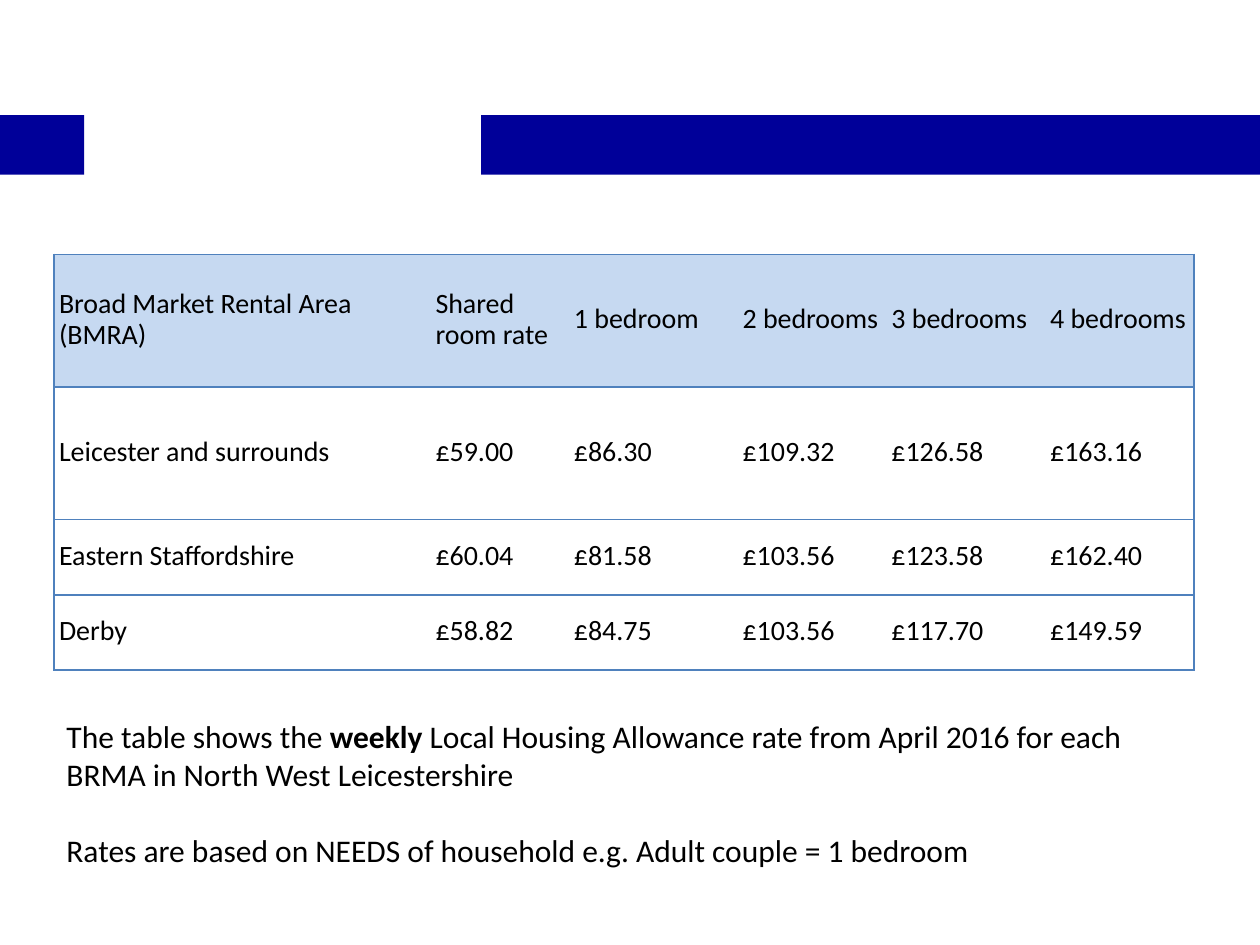
import pptx
import pptx.dml.color
import pptx.enum.shapes
import pptx.enum.text
import pptx.oxml
import pptx.oxml.ns
import pptx.util
from pptx.util import Cm

NAVY, PALE, BORDER, WHITE, BLACK = "000099", "C6D9F1", "4F81BD", "FFFFFF", "000000"

RATES = [
    ["Broad Market Rental Area (BMRA)", "Shared room rate", "1 bedroom",
     "2 bedrooms", "3 bedrooms", "4 bedrooms"],
    ["Leicester and surrounds", "£59.00", "£86.30", "£109.32", "£126.58", "£163.16"],
    ["Eastern Staffordshire", "£60.04", "£81.58", "£103.56", "£123.58", "£162.40"],
    ["Derby", "£58.82", "£84.75", "£103.56", "£117.70", "£149.59"],
]
COL_WIDTHS = [7.59, 2.79, 3.4, 3, 3.2, 3]
ROW_HEIGHTS = [2.67, 2.67, 1.52, 1.52]

NOTES = [
    [("The table shows the ", False), ("weekly", True),
     (" Local Housing Allowance rate from April 2016 for each BRMA"
      " in North West Leicestershire", False)],
    [("Rates are based on NEEDS of household e.g. Adult couple = 1 bedroom", False)],
]


def rgb(value):
    return pptx.dml.color.RGBColor.from_string(value)


def apply(target, values):
    for name, value in values.items():
        setattr(target, name, value)


class Deck:
    font = "Calibri"

    def __init__(self, width, height):
        self.prs = pptx.Presentation()
        apply(self.prs, {"slide_width": Cm(width), "slide_height": Cm(height)})
        self.s = self.prs.slides.add_slide(self.prs.slide_layouts[6])

    def run(self, p, text, size, bold=False):
        r = p.add_run()
        r.text = text
        apply(r.font, {"name": self.font, "size": pptx.util.Pt(size), "bold": bold})
        r.font.color.rgb = rgb(BLACK)

    def bar(self, left, top, width, height):
        sp = self.s.shapes.add_shape(
            pptx.enum.shapes.MSO_SHAPE.RECTANGLE,
            Cm(left), Cm(top), Cm(width), Cm(height))
        sp.shadow.inherit = False
        sp.fill.solid()
        sp.fill.fore_color.rgb = rgb(NAVY)
        sp.line.fill.background()

    def borders(self, cell, sides):
        tc_pr = cell._tc.get_or_add_tcPr()
        for i, side in enumerate("LRTB"):
            fill = (f'<a:solidFill><a:srgbClr val="{BORDER}"/></a:solidFill>'
                    if side in sides else "<a:noFill/>")
            tc_pr.insert(i, pptx.oxml.parse_xml(
                f'<a:ln{side} {pptx.oxml.ns.nsdecls("a")} w="12700">{fill}</a:ln{side}>'))

    def table(self, left, top, rows, widths, heights):
        tbl = self.s.shapes.add_table(
            len(rows), len(widths), Cm(left), Cm(top),
            Cm(sum(widths)), Cm(sum(heights))).table
        apply(tbl, {"first_row": False, "horz_banding": False})
        for col, width in zip(tbl.columns, widths):
            col.width = Cm(width)
        for row, height in zip(tbl.rows, heights):
            row.height = Cm(height)
        margins = {f"margin_{m}": Cm(0.1) for m in ("left", "right", "top", "bottom")}
        for i, texts in enumerate(rows):
            for j, text in enumerate(texts):
                cell = tbl.cell(i, j)
                apply(cell, {"vertical_anchor": pptx.enum.text.MSO_ANCHOR.MIDDLE, **margins})
                cell.fill.solid()
                cell.fill.fore_color.rgb = rgb(WHITE if i else PALE)
                left_side = "L" if j == 0 else ""
                right_side = "R" if j == len(texts) - 1 else ""
                self.borders(cell, "TB" + left_side + right_side)
                p = cell.text_frame.paragraphs[0]
                p.line_spacing = pptx.util.Pt(18)
                self.run(p, text, 16)

    def text(self, left, top, width, height, paragraphs, size, gap):
        tf = self.s.shapes.add_textbox(Cm(left), Cm(top), Cm(width), Cm(height)).text_frame
        apply(tf, {"word_wrap": True,
                   "auto_size": pptx.enum.text.MSO_AUTO_SIZE.SHAPE_TO_FIT_TEXT})
        for i, runs in enumerate(paragraphs):
            p = tf.add_paragraph() if i else tf.paragraphs[0]
            if i:
                p.space_before = pptx.util.Pt(gap)
            for text, bold in runs:
                self.run(p, text, size, bold)


def main():
    deck = Deck(25.4, 19.05)
    for left, width in [(9.7, 15.7), (0, 1.7)]:
        deck.bar(left, 2.32, width, 1.2)
    deck.table(1.09, 5.13, RATES, COL_WIDTHS, ROW_HEIGHTS)
    deck.text(1.09, 14.33, 22.8, 3.33, NOTES, 18, 22)
    deck.prs.save("out.pptx")


if __name__ == "__main__":
    main()
